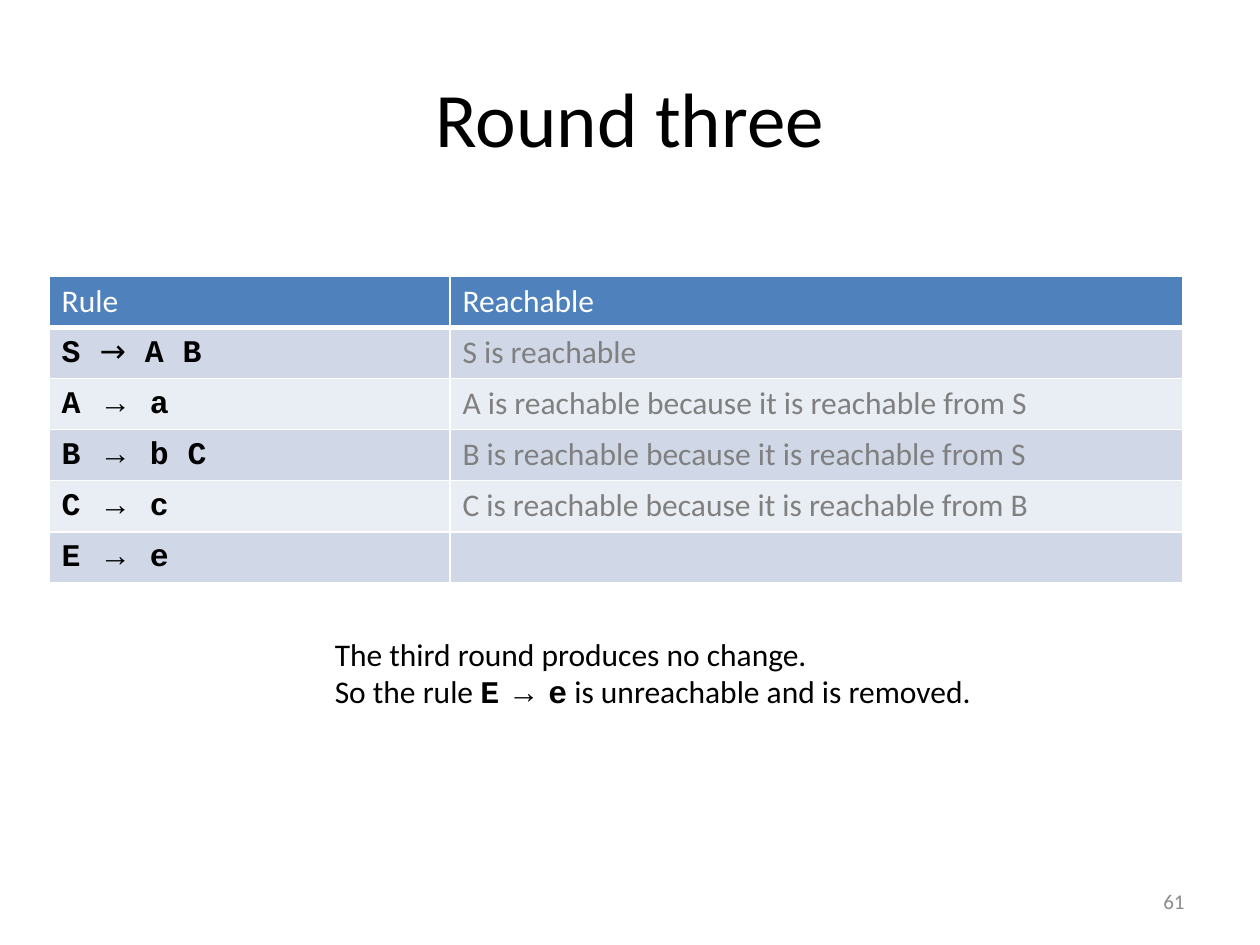
from lxml import etree
from pptx import Presentation
from pptx import util as u
from pptx.dml.color import RGBColor
from pptx.enum import text as t
from pptx.oxml.ns import qn

COLOURS = {
    "black": "000000", "white": "FFFFFF", "grey": "808080", "number": "8C8C8C",
    "header": "4F81BD", "odd": "D0D8E8", "even": "E9EDF4",
}
HEADER = ("Rule", "Reachable")
# left side, arrow font, right side, reason
RULES = [
    ("S", "Roboto Condensed", "A B", "S is reachable"),
    ("A", "Arial", "a", "A is reachable because it is reachable from S"),
    ("B", "Arial", "b C", "B is reachable because it is reachable from S"),
    ("C", "Arial", "c", "C is reachable because it is reachable from B"),
    ("E", "Arial", "e", ""),
]
CODE = {"font": "Courier New", "bold": True}
COLUMN_WIDTHS = (8.08, 14.78)
ROW_HEIGHT = 1.03


def colour(name):
    return RGBColor.from_string(COLOURS[name])


def add_text(paragraph, content, font="Calibri", size=18, bold=False, color="black"):
    run = paragraph.add_run()
    run.text = content
    run.font.name = font
    run.font.size = u.Pt(size)
    run.font.bold = bold
    run.font.color.rgb = colour(color)


def add_box(slide, left, top, width, height, align=t.PP_ALIGN.LEFT,
            anchor=t.MSO_ANCHOR.MIDDLE, wrap=True):
    """Add a text box and return its text frame."""
    box = slide.shapes.add_textbox(u.Cm(left), u.Cm(top), u.Cm(width), u.Cm(height))
    frame = box.text_frame
    frame.word_wrap = wrap
    frame.vertical_anchor = anchor
    frame.paragraphs[0].alignment = align
    return frame


def style_cell(cell, fill, bottom=1):
    """Fill a cell and give it white borders, widths in points."""
    properties = cell._tc.get_or_add_tcPr()
    for side, width in (("lnL", 1), ("lnR", 1), ("lnT", 1), ("lnB", bottom)):
        line = etree.SubElement(properties, qn(f"a:{side}"), w=str(u.Pt(width)))
        solid = etree.SubElement(line, qn("a:solidFill"))
        etree.SubElement(solid, qn("a:srgbClr"), val=COLOURS["white"])
    cell.fill.solid()
    cell.fill.fore_color.rgb = colour(fill)


def add_rule_table(slide):
    count = len(RULES) + 1
    table = slide.shapes.add_table(
        count, len(HEADER), u.Cm(0.99), u.Cm(5.57),
        u.Cm(sum(COLUMN_WIDTHS)), u.Cm(ROW_HEIGHT * count)).table
    for column, width in zip(table.columns, COLUMN_WIDTHS):
        column.width = u.Cm(width)
    for row in table.rows:
        row.height = u.Cm(ROW_HEIGHT)
    for index, label in enumerate(HEADER):
        cell = table.cell(0, index)
        style_cell(cell, "header", bottom=3)
        add_text(cell.text_frame.paragraphs[0], label, color="white")
    for row, (left, arrow_font, right, reason) in enumerate(RULES, 1):
        rule_cell, reason_cell = table.cell(row, 0), table.cell(row, 1)
        for cell in (rule_cell, reason_cell):
            style_cell(cell, "odd" if row % 2 else "even")
        paragraph = rule_cell.text_frame.paragraphs[0]
        add_text(paragraph, left + " ", **CODE)
        add_text(paragraph, "→", font=arrow_font)
        add_text(paragraph, " " + right, **CODE)
        if reason:
            add_text(reason_cell.text_frame.paragraphs[0], reason, color="grey")


def add_conclusion(slide):
    frame = add_box(slide, 6.5, 12.67, 13.44, 1.8, anchor=t.MSO_ANCHOR.TOP, wrap=False)
    frame.auto_size = t.MSO_AUTO_SIZE.SHAPE_TO_FIT_TEXT
    add_text(frame.paragraphs[0], "The third round produces no change.")
    paragraph = frame.add_paragraph()
    add_text(paragraph, "So the rule ")
    add_text(paragraph, "E", **CODE)
    add_text(paragraph, " → ", font="Arial")
    add_text(paragraph, "e", **CODE)
    add_text(paragraph, " is unreachable and is removed.")


def main():
    presentation = Presentation()
    presentation.slide_width, presentation.slide_height = u.Cm(25.4), u.Cm(19.05)
    slide = presentation.slides.add_slide(presentation.slide_layouts[6])
    title = add_box(slide, 1.27, 0.76, 22.86, 3.18, align=t.PP_ALIGN.CENTER)
    add_text(title.paragraphs[0], "Round three", size=44)
    number = add_box(slide, 18.2, 17.66, 5.93, 1.01, align=t.PP_ALIGN.RIGHT)
    add_text(number.paragraphs[0], "61", size=12, color="number")
    add_rule_table(slide)
    add_conclusion(slide)
    presentation.save("out.pptx")


if __name__ == "__main__":
    main()
